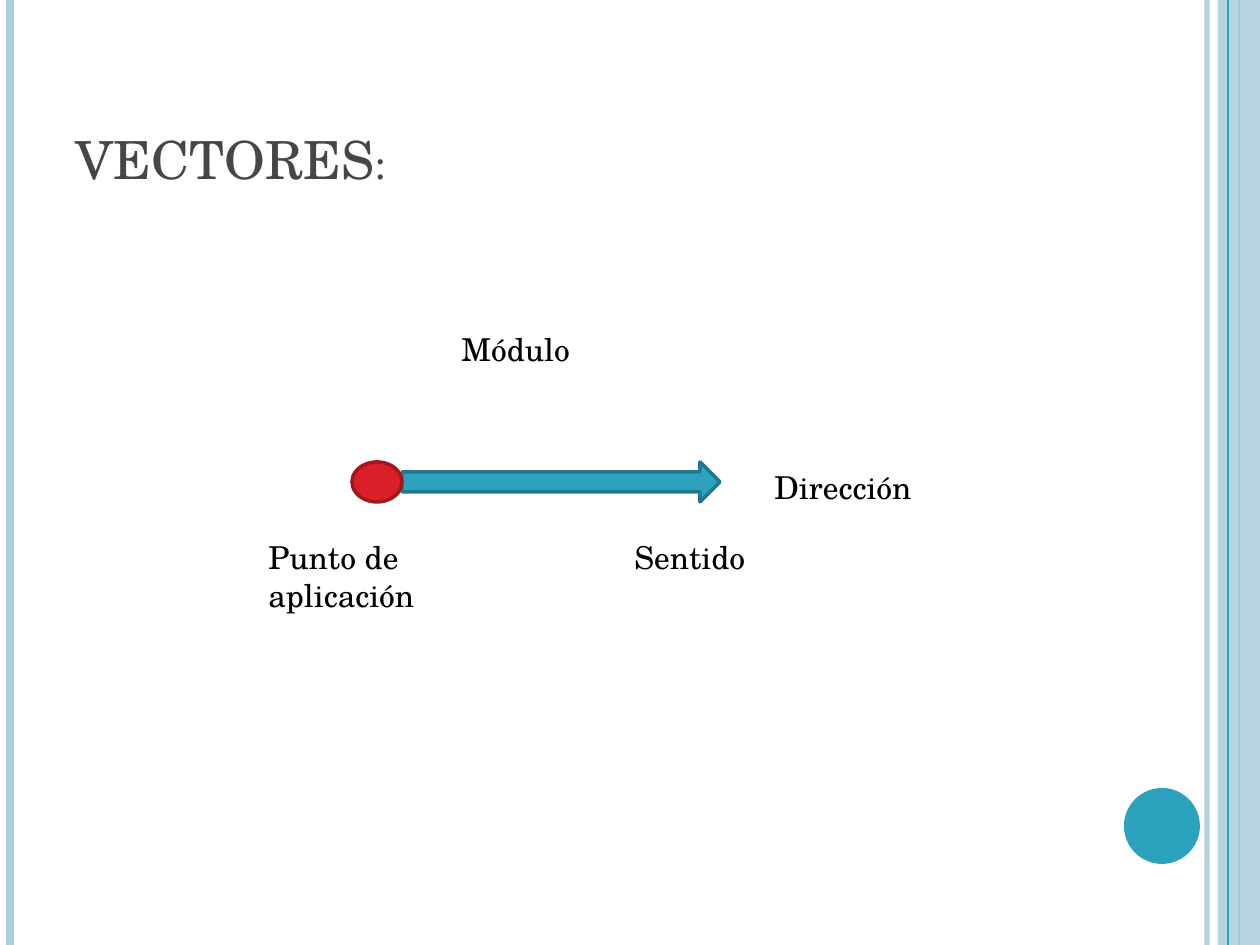
from dataclasses import dataclass

from pptx import Presentation
from pptx import util as u
from pptx.dml.color import RGBColor
from pptx.enum import shapes, text
from pptx.oxml.ns import qn
from lxml import etree


@dataclass(frozen=True)
class Theme:
    font: str = "TeX Gyre Schola"
    title_size: int = 30
    label_size: int = 18
    title: str = "464646"
    label: str = "000000"
    pale: str = "ADCEDC"
    teal: str = "2DA2BF"
    teal_dark: str = "21788D"
    red: str = "DA1F28"
    red_dark: str = "A1171E"


T = Theme()
PX = 914400 / 126
SLIDE = (1260, 945)
OVAL = shapes.MSO_SHAPE.OVAL
RECT = shapes.MSO_SHAPE.RECTANGLE
ARROW = shapes.MSO_SHAPE.RIGHT_ARROW
POINT = shapes.MSO_SHAPE.FLOWCHART_CONNECTOR

TITLE = ("VECTORES:", (63, 38, 1029, 158))
OUTER_RULES = [(1207, T.pale, 3, 93), (10, T.pale, 4.5, 100), (1239, T.teal, 1.5, 100)]
INNER_RULES = [(1228, T.teal, 0.75, 100)]
BAND = (RECT, (1218, 0, 42, 945), T.pale, None, 87)
VECTOR = [
    (OVAL, (1124, 788, 76, 76), T.teal, None, 100),
    (ARROW, (402, 462, 318, 40), T.teal, T.teal_dark, 100),
    (POINT, (352, 462, 50, 40), T.red, T.red_dark, 100),
]
LABELS = [
    (["Punto de", "aplicación"], (256, 532, 194, 89)),
    (["Sentido"], (622, 532, 136, 50)),
    (["Dirección"], (762, 462, 205, 50)),
    (["Módulo"], (449, 324, 136, 50)),
]


def emu(box):
    return [u.Emu(round(v * PX)) for v in box]


def paint(fill, color, alpha=100):
    fill.solid()
    fill.fore_color.rgb = RGBColor.from_string(color)
    if alpha < 100:
        clr = fill._xPr.find(qn("a:solidFill"))[0]
        etree.SubElement(clr, qn("a:alpha"), val=str(alpha * 1000))


def style(p, size, color):
    p.font.name = T.font
    p.font.size = u.Pt(size)
    p.font.color.rgb = RGBColor.from_string(color)


def add_rule(s, x, color, width, alpha):
    c = s.shapes.add_connector(shapes.MSO_CONNECTOR.STRAIGHT, *emu((x, 0, x, SLIDE[1])))
    c.line.width = u.Pt(width)
    paint(c.line.fill, color, alpha)
    etree.SubElement(c._element.spPr, qn("a:effectLst"))


def add_figure(s, kind, box, fill, line, alpha):
    sp = s.shapes.add_shape(kind, *emu(box))
    sp.shadow.inherit = False
    paint(sp.fill, fill, alpha)
    if line:
        paint(sp.line.fill, line)
        sp.line.width = u.Pt(2)
    else:
        sp.line.fill.background()


def add_title(s, words, box):
    sp = s.shapes.title
    sp.left, sp.top, sp.width, sp.height = emu(box)
    tf = sp.text_frame
    tf.text = words
    tf.vertical_anchor = text.MSO_ANCHOR.BOTTOM
    p = tf.paragraphs[0]
    p.alignment = text.PP_ALIGN.LEFT
    style(p, T.title_size, T.title)
    p.runs[0].font._element.set("cap", "small")


def add_label(s, lines, box):
    tf = s.shapes.add_textbox(*emu(box)).text_frame
    tf.word_wrap = True
    tf.auto_size = text.MSO_AUTO_SIZE.SHAPE_TO_FIT_TEXT
    tf.text = "\n".join(lines)
    for p in tf.paragraphs:
        style(p, T.label_size, T.label)


def main():
    prs = Presentation()
    prs.slide_width, prs.slide_height = emu(SLIDE)
    s = prs.slides.add_slide(prs.slide_layouts[5])
    for rule in OUTER_RULES:
        add_rule(s, *rule)
    add_figure(s, *BAND)
    for rule in INNER_RULES:
        add_rule(s, *rule)
    add_title(s, *TITLE)
    for figure in VECTOR:
        add_figure(s, *figure)
    for label in LABELS:
        add_label(s, *label)
    prs.save("out.pptx")


if __name__ == "__main__":
    main()
